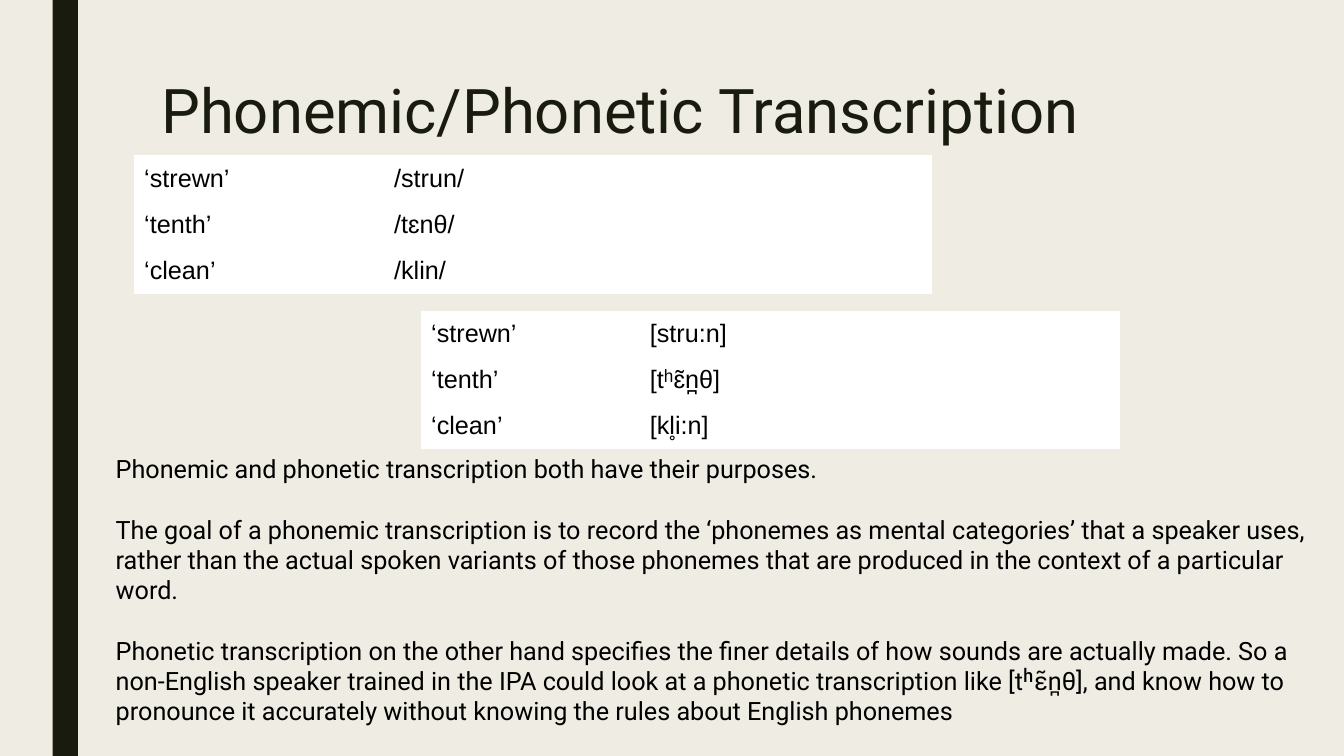
"""Build the slide on phonemic and phonetic transcription."""
from pptx import Presentation
from pptx.dml.color import RGBColor
from pptx.enum.shapes import MSO_SHAPE
from pptx.enum.text import MSO_ANCHOR, PP_ALIGN
from pptx.util import Pt

COLORS = {"back": "EFEDE3", "dark": "191B0E", "white": "FFFFFF", "black": "000000"}
ROW = 32.7
WORDS = ["‘strewn’", "‘tenth’", "‘clean’"]
PHONEMES = ["/strun/", "/tɛnθ/", "/klin/"]
PHONES = ["[stru:n]", "[tʰɛ̃n̪θ]", "[kl̥i:n]"]
NOTES = [
    "Phonemic and phonetic transcription both have their purposes.",
    "The goal of a phonemic transcription is to record the ‘phonemes as mental "
    "categories’ that a speaker uses, rather than the actual spoken variants of "
    "those phonemes that are produced in the context of a particular word.",
    "Phonetic transcription on the other hand specifies the finer details of how "
    "sounds are actually made. So a non-English speaker trained in the IPA could "
    "look at a phonetic transcription like [tʰɛ̃n̪θ], and know how to pronounce it "
    "accurately without knowing the rules about English phonemes",
]


def paint(fill, color):
    """Give a fill a solid colour."""
    fill.solid()
    fill.fore_color.rgb = RGBColor.from_string(COLORS[color])


def style(para, size, face, color):
    """Align a paragraph left and format its runs."""
    para.alignment = PP_ALIGN.LEFT
    for run in para.runs:
        run.font.size = Pt(size)
        run.font.name = face
        run.font.color.rgb = RGBColor.from_string(COLORS[color])


def add_bar(slide):
    """Draw the dark bar down the left side."""
    bar = slide.shapes.add_shape(MSO_SHAPE.RECTANGLE, Pt(37.6), 0, Pt(18), Pt(540))
    bar.shadow.inherit = False
    paint(bar.fill, "dark")
    bar.line.fill.background()


def set_title(slide, text):
    """Place and format the title."""
    title = slide.shapes.title
    title.left, title.top, title.width, title.height = Pt(108), Pt(54), Pt(756), Pt(117)
    frame = title.text_frame
    frame.text = text
    frame.word_wrap = True
    frame.vertical_anchor = MSO_ANCHOR.TOP
    para = frame.paragraphs[0]
    para.line_spacing = 0.89
    style(para, 44, "Roboto", "dark")


def add_list(slide, left, top, widths, sounds):
    """Add a table that pairs each word with its transcription."""
    frame = slide.shapes.add_table(len(WORDS), 2, Pt(left), Pt(top),
                                   Pt(sum(widths)), Pt(ROW * len(WORDS)))
    table = frame.table
    table.first_row = table.horz_banding = False
    for col, width in zip(table.columns, widths):
        col.width = Pt(width)
    for row, pair in enumerate(zip(WORDS, sounds)):
        table.rows[row].height = Pt(ROW)
        for col, text in enumerate(pair):
            cell = table.cell(row, col)
            cell.text_frame.text = text
            cell.vertical_anchor = MSO_ANCHOR.MIDDLE
            paint(cell.fill, "white")
            style(cell.text_frame.paragraphs[0], 18, "Arial", "black")


def add_notes(slide):
    """Add the explanation below the tables."""
    box = slide.shapes.add_textbox(Pt(75.6), Pt(320.4), Pt(872), Pt(181.5))
    frame = box.text_frame
    frame.word_wrap = True
    frame.text = "\n".join(NOTES)
    for para in frame.paragraphs:
        style(para, 18, "Roboto", "black")
    for para in frame.paragraphs[:-1]:
        para.space_after = Pt(21.6)


def main():
    """Build and save the slide."""
    deck = Presentation()
    deck.slide_width, deck.slide_height = Pt(960), Pt(540)
    slide = deck.slides.add_slide(deck.slide_layouts[5])
    paint(slide.background.fill, "back")
    add_bar(slide)
    set_title(slide, "Phonemic/Phonetic Transcription")
    add_list(slide, 95.8, 111.4, [178.5, 391], PHONEMES)
    add_list(slide, 300.8, 222.3, [156.2, 342.8], PHONES)
    add_notes(slide)
    deck.save("out.pptx")


if __name__ == "__main__":
    main()
